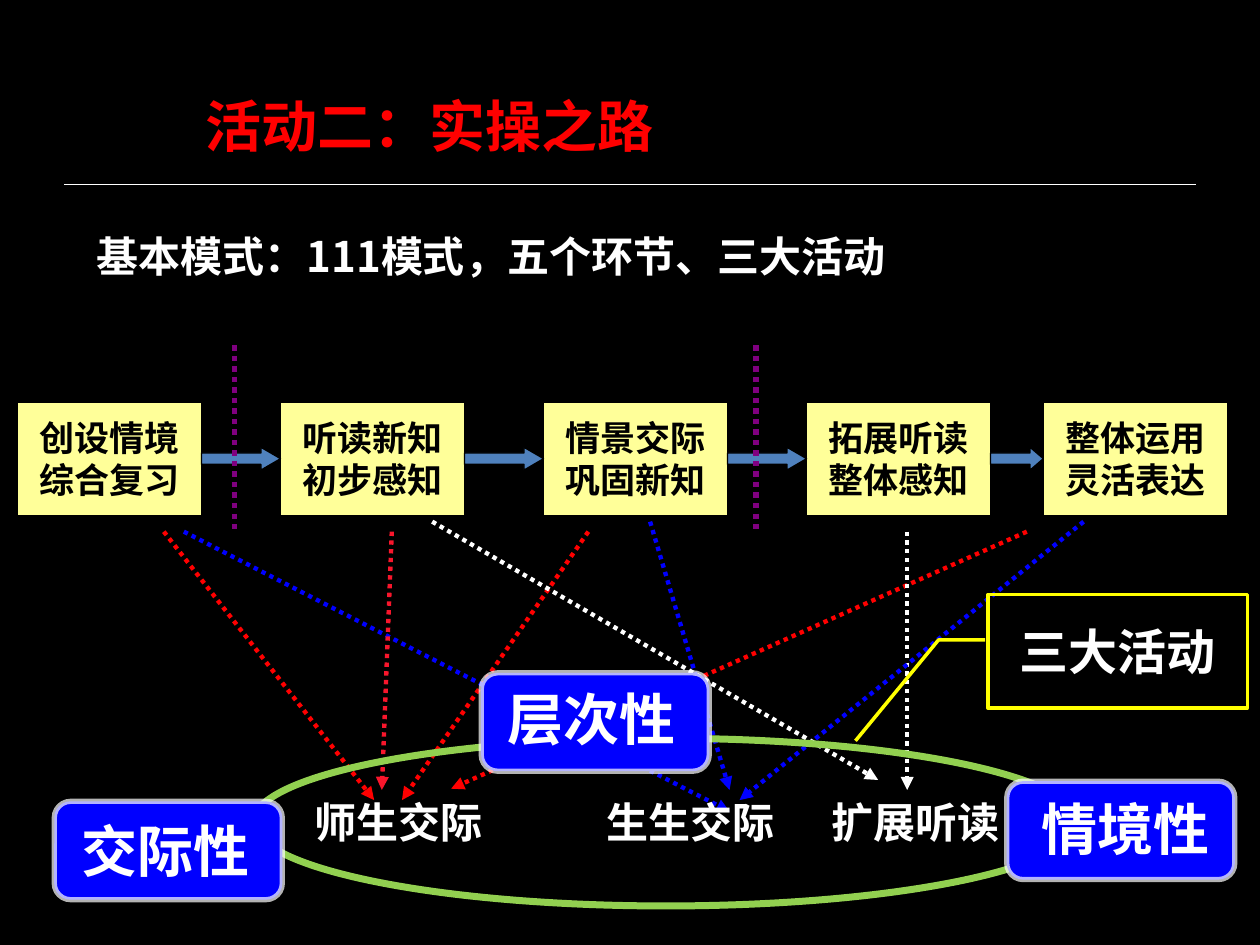
import pptx
import pptx.util
import pptx.dml.color
import pptx.enum.dml
import pptx.enum.shapes
import pptx.enum.text
import pptx.oxml
import pptx.oxml.ns

Pt = pptx.util.Pt
SHAPE = pptx.enum.shapes.MSO_SHAPE
ALIGN = pptx.enum.text.PP_ALIGN
ANCHOR = pptx.enum.text.MSO_ANCHOR
FIT = pptx.enum.text.MSO_AUTO_SIZE
FONT = "Noto Sans CJK SC"

COLORS = {
    "black": "000000", "white": "FFFFFF", "red": "FF0000", "crimson": "F8162C",
    "blue": "0000FF", "purple": "800080", "cream": "FFFF99", "steel": "4F81BD",
    "green": "92D050", "yellow": "FFFF00",
}

TITLE = "活动二：实操之路"
SUBTITLE = "基本模式：111模式，五个环节、三大活动"
STEPS = ["创设情境\n综合复习", "听读新知\n初步感知", "情景交际\n巩固新知",
         "拓展听读\n整体感知", "整体运用\n灵活表达"]
STEP_LEFTS = [10 + 150.3 * index for index in range(4)] + [596.2]
STEP_TOP, STEP_WIDTH, STEP_HEIGHT = 229.7, 105.1, 64.8
ARROW_HEIGHT = 13

DIVIDERS = [133.9, 432]
LINKS = [
    ("red", 93.6, 303.8, 213.8, 457.2),
    ("red", 336.2, 303.8, 229.7, 457.2),
    ("red", 586.8, 303.8, 257.8, 450.7),
    ("blue", 105.1, 303.8, 416.9, 463.7),
    ("white", 518.4, 303.8, 518.4, 451.4),
    ("crimson", 223.9, 303.8, 218.2, 451.4),
    ("white", 247, 298.1, 501.8, 445.7),
    ("blue", 371.5, 298.1, 416.9, 451.4),
    ("blue", 619.2, 298.1, 422.6, 457.2),
]
ACTIVITIES = [("师生交际", 172.8), ("生生交际", 339.8), ("扩展听读", 468)]
QUALITIES = [
    ("情境性", (575.3, 446.4), (581, 450.7, 124.6)),
    ("层次性", (275, 384.5), (272.2, 387.4, 131.8)),
    ("交际性", (31, 457.9), (30.2, 463, 128.9)),
]
CALLOUT_POINTS = [0.4, -0.01, 0.4, -0.19, 1.29, -0.51]


def rgb(name):
    return pptx.dml.color.RGBColor.from_string(COLORS[name])


def write(shape, text, size, color, align=ALIGN.LEFT):
    shape.text_frame.text = text
    for paragraph in shape.text_frame.paragraphs:
        paragraph.alignment = align
        for run in paragraph.runs:
            run.font.size = Pt(size)
            run.font.bold = True
            run.font.name = FONT
            run.font.color.rgb = rgb(color)
            east_asian = pptx.oxml.parse_xml(
                f'<a:ea {pptx.oxml.ns.nsdecls("a")} typeface="{FONT}"/>')
            run.font._element.find(pptx.oxml.ns.qn("a:latin")).addnext(east_asian)


def add_label(slide, text, box, size, color="white", align=ALIGN.LEFT, wrap=True):
    label = slide.shapes.add_textbox(*map(Pt, box))
    write(label, text, size, color, align)
    label.text_frame.word_wrap = wrap
    label.text_frame.auto_size = FIT.SHAPE_TO_FIT_TEXT


def add_shape(slide, kind, box, fill, line, width):
    shape = slide.shapes.add_shape(kind, *map(Pt, box))
    shape.shadow.inherit = False
    if fill:
        shape.fill.solid()
        shape.fill.fore_color.rgb = rgb(fill)
    else:
        shape.fill.background()
    shape.line.color.rgb = rgb(line)
    shape.line.width = Pt(width)
    shape.text_frame.vertical_anchor = ANCHOR.MIDDLE
    return shape


def add_line(slide, ends, color, width, dotted=True, arrow=False):
    line = slide.shapes.add_connector(
        pptx.enum.shapes.MSO_CONNECTOR.STRAIGHT, *map(Pt, ends))
    line.line.color.rgb = rgb(color)
    line.line.width = Pt(width)
    if dotted:
        line.line.dash_style = pptx.enum.dml.MSO_LINE.ROUND_DOT
    if arrow:
        line.line._get_or_add_ln().append(pptx.oxml.parse_xml(
            f'<a:tailEnd {pptx.oxml.ns.nsdecls("a")} type="triangle"/>'))
    line._element.spPr.append(pptx.oxml.parse_xml(
        f'<a:effectLst {pptx.oxml.ns.nsdecls("a")}/>'))


def add_steps(slide):
    arrow_top = STEP_TOP + (STEP_HEIGHT - ARROW_HEIGHT) / 2
    for index, (text, left) in enumerate(zip(STEPS, STEP_LEFTS)):
        step = add_shape(slide, SHAPE.FLOWCHART_PROCESS,
                         (left, STEP_TOP, STEP_WIDTH, STEP_HEIGHT), "cream", "black", 0.75)
        write(step, text, 20, "black", ALIGN.CENTER)
        if index:
            start = STEP_LEFTS[index - 1] + STEP_WIDTH
            arrow = add_shape(slide, SHAPE.RIGHT_ARROW,
                              (start, arrow_top, left - start, ARROW_HEIGHT),
                              "steel", "black", 0.75)
            arrow.adjustments[1] = 0.86 if index < 4 else 0.58


def add_qualities(slide):
    for text, corner, (left, top, width) in QUALITIES:
        badge = add_shape(slide, SHAPE.ROUNDED_RECTANGLE, (*corner, 130.3, 56.2),
                          "blue", "white", 3)
        color = badge.line._get_or_add_ln().find(".//" + pptx.oxml.ns.qn("a:srgbClr"))
        color.append(pptx.oxml.parse_xml(
            f'<a:alpha {pptx.oxml.ns.nsdecls("a")} val="70000"/>'))
        add_label(slide, text, (left, top, width, 46.1), 32, align=ALIGN.CENTER)


def main():
    presentation = pptx.Presentation()
    presentation.slide_width, presentation.slide_height = Pt(720), Pt(540)
    slide = presentation.slides.add_slide(presentation.slide_layouts[5])
    slide.background.fill.solid()
    slide.background.fill.fore_color.rgb = rgb("black")

    title = slide.shapes.title
    title.left, title.top, title.width, title.height = map(Pt, (110.2, 43.2, 306.7, 56.9))
    write(title, TITLE, 32, "red")
    title.text_frame.vertical_anchor = ANCHOR.MIDDLE
    add_line(slide, (36.7, 105.6, 683.3, 105.6), "white", 0.75, dotted=False)

    add_steps(slide)
    for x in DIVIDERS:
        add_line(slide, (x, 197.3, x, 305.3), "purple", 3)
    for color, *ends in LINKS:
        add_line(slide, ends, color, 2.5, arrow=True)
    for text, left in ACTIVITIES:
        add_label(slide, text, (left, 451.4, 110.9, 36), 24, wrap=False)
    add_label(slide, SUBTITLE, (48.2, 128.2, 607, 36), 24)

    add_shape(slide, SHAPE.OVAL, (144.7, 421.9, 471.6, 95.8), None, "green", 4)
    add_qualities(slide)

    callout = add_shape(slide, SHAPE.LINE_CALLOUT_2, (564.5, 339.8, 148.3, 64.8),
                        None, "yellow", 2)
    for index, value in enumerate(CALLOUT_POINTS):
        callout.adjustments[index] = value
    write(callout, "三大活动", 28, "white", ALIGN.CENTER)

    presentation.save("out.pptx")


if __name__ == "__main__":
    main()
